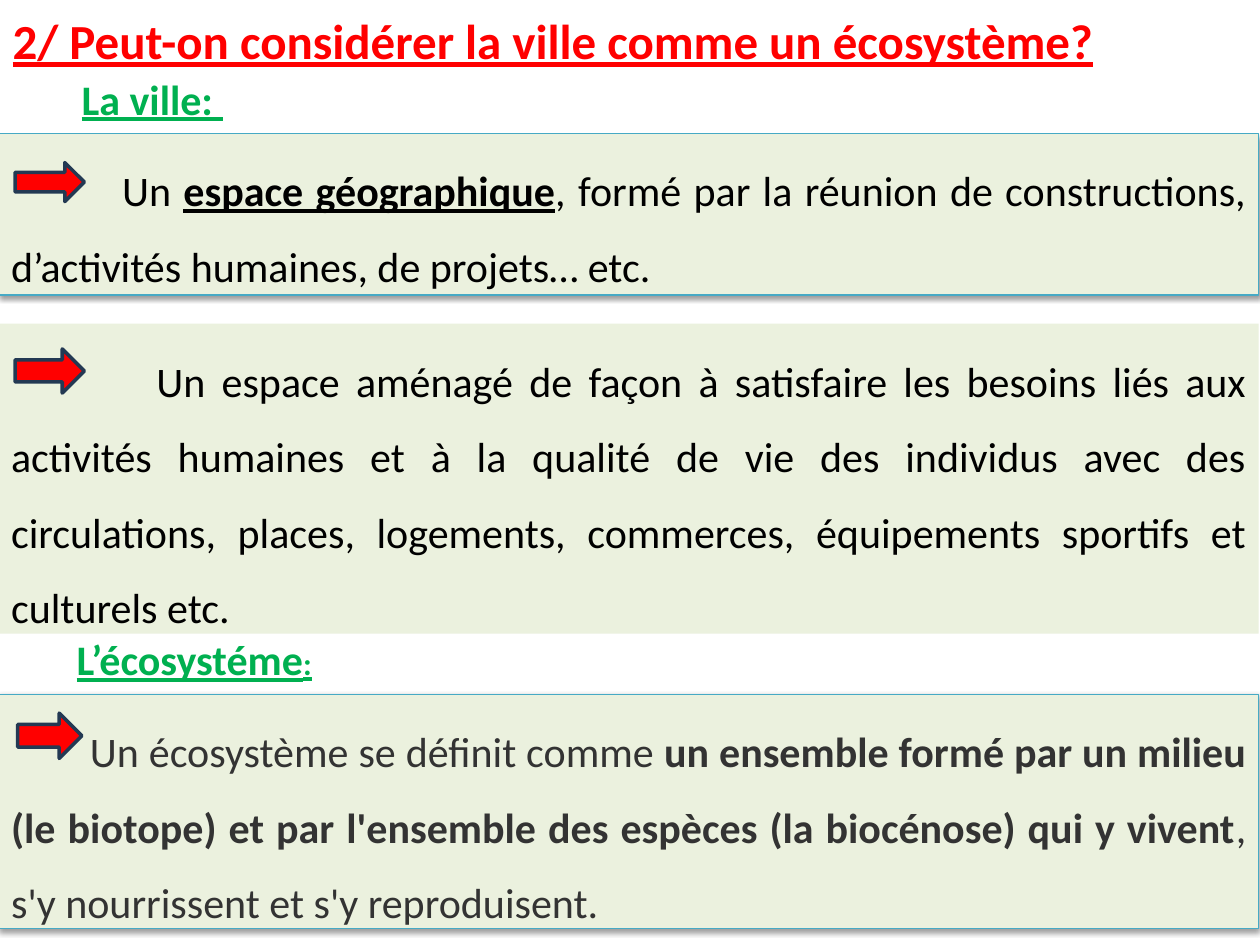
"""Build a slide that defines the city and the ecosystem."""
from lxml import etree
from pptx import Presentation
from pptx.dml.color import RGBColor
from pptx.enum.shapes import MSO_SHAPE
from pptx.enum.text import MSO_ANCHOR, MSO_AUTO_SIZE, PP_ALIGN
from pptx.util import Pt

RECT, ARROW = MSO_SHAPE.RECTANGLE, MSO_SHAPE.RIGHT_ARROW
TOP, MIDDLE = MSO_ANCHOR.TOP, MSO_ANCHOR.MIDDLE
LEFT, JUSTIFY = PP_ALIGN.LEFT, PP_ALIGN.JUSTIFY
NO_FIT = MSO_AUTO_SIZE.NONE
RED, GREEN, BLACK, GREY = "FF0000", "00B050", "000000", "333333"
PALE, TEAL, NAVY = "EBF1DE", "46AAC5", "233953"
BOX_LEFT, BOX_WIDTH = -0.72, 720
STRONG = {"bold": True, "underline": True}
DRAWING = "http://schemas.openxmlformats.org/drawingml/2006/main"
SHADOW = (
    f'<a:effectLst xmlns:a="{DRAWING}">'
    '<a:outerShdw blurRad="39370" dist="20320" dir="5400000" rotWithShape="0">'
    '<a:srgbClr val="000000"><a:alpha val="38000"/></a:srgbClr>'
    "</a:outerShdw></a:effectLst>"
)

TITLE = [("2/ Peut-on considérer la ville comme un écosystème?", {"size": Pt(28), **STRONG})]
HEADINGS = [
    ((39.6, 38.2, 144.7, 36), [("La ville: ", STRONG)]),
    ((36.7, 358.6, 170, 36), [("L’écosystéme", STRONG), (":", {"size": Pt(18), **STRONG})]),
]
BOXES = [
    {"top": 76.3, "height": 92.2, "indent": 63.4, "color": BLACK, "framed": True,
     "arrow": (8.6, 92.9, 39.6, 22.3),
     "runs": [("Un ", {}), ("espace géographique", STRONG),
              (", formé par la réunion de constructions, d’activités humaines, "
               "de projets… etc.", {})]},
    {"top": 185, "height": 177.1, "indent": 83, "color": BLACK, "framed": False,
     "arrow": (8.6, 199.4, 39.6, 25.2),
     "runs": [("Un espace aménagé de façon à satisfaire les besoins liés aux activités "
               "humaines et à la qualité de vie des individus avec des circulations, "
               "places, logements, commerces, équipements sportifs et culturels etc.", {})]},
    {"top": 396.7, "height": 133.9, "indent": 45, "color": GREY, "framed": True,
     "arrow": (10.1, 407.5, 36.7, 25.9),
     "runs": [("Un écosystème se définit comme ", {}),
              ("un ensemble formé par un milieu (le biotope) et par l'ensemble des "
               "espèces (la biocénose) qui y vivent", {"bold": True}),
              (", s'y nourrissent et s'y reproduisent.", {})]},
]


def rgb(value):
    """Turn a hex string into a colour."""
    return RGBColor.from_string(value)


def write(shape, runs, color, align=LEFT, anchor=TOP, spacing=1.0, indent=0):
    """Fill a shape with one formatted paragraph."""
    tf = shape.text_frame
    for name, value in {"word_wrap": True, "auto_size": NO_FIT, "vertical_anchor": anchor}.items():
        setattr(tf, name, value)
    p = tf.paragraphs[0]
    p.alignment, p.line_spacing = align, spacing
    if indent:
        p._p.get_or_add_pPr().set("indent", str(Pt(indent)))
    for text, look in runs:
        r = p.add_run()
        r.text = text
        r.font.color.rgb = rgb(color)
        base = {"name": "Calibri", "size": Pt(24), "bold": False, "underline": False}
        for name, value in {**base, **look}.items():
            setattr(r.font, name, value)


def add_shape(s, kind, place, fill, line=None, width=0.75):
    """Add a flat preset shape with an optional outline."""
    shape = s.shapes.add_shape(kind, *map(Pt, place))
    shape.shadow.inherit = False
    shape.fill.solid()
    shape.fill.fore_color.rgb = rgb(fill)
    if line:
        shape.line.color.rgb = rgb(line)
        shape.line.width = Pt(width)
    else:
        shape.line.fill.background()
    return shape


def add_box(s, box):
    """Add a definition panel, with a soft shadow when it is framed."""
    place = (BOX_LEFT, box["top"], BOX_WIDTH, box["height"])
    shape = add_shape(s, RECT, place, PALE, TEAL if box["framed"] else None)
    if box["framed"]:
        effects = shape._element.spPr.find(f"{{{DRAWING}}}effectLst")
        effects.getparent().replace(effects, etree.fromstring(SHADOW))
    write(shape, box["runs"], box["color"], JUSTIFY, spacing=1.5, indent=box["indent"])


def main():
    """Lay out the title, panels, headings and arrows."""
    prs = Presentation()
    prs.slide_width, prs.slide_height = Pt(720), Pt(540)
    s = prs.slides.add_slide(prs.slide_layouts[5])
    title = s.shapes.title
    title.left, title.top, title.width, title.height = map(Pt, (0, 0, 663.8, 46.1))
    write(title, TITLE, RED, anchor=MIDDLE)
    for box in BOXES:
        add_box(s, box)
    for place, runs in HEADINGS:
        write(s.shapes.add_textbox(*map(Pt, place)), runs, GREEN)
    for box in BOXES:
        add_shape(s, ARROW, box["arrow"], RED, NAVY, 2)
    prs.save("out.pptx")


if __name__ == "__main__":
    main()
